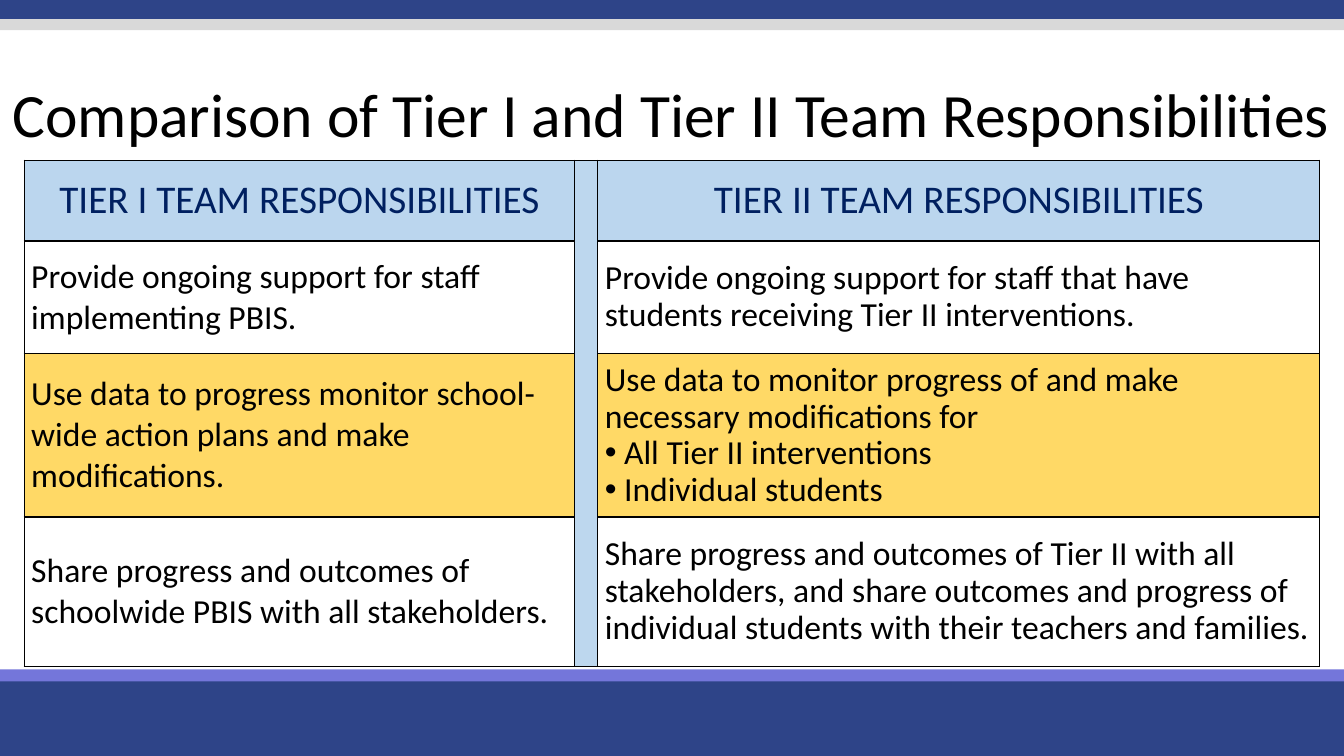
from lxml.etree import SubElement
from pptx import Presentation
from pptx.dml.color import RGBColor
from pptx.enum.shapes import MSO_SHAPE
from pptx.enum.text import MSO_ANCHOR, PP_ALIGN
from pptx.oxml.ns import qn
from pptx.util import Inches, Pt

COLORS = {
    "navy": "2E4488", "violet": "7476DA", "gray": "D9D9D9", "header": "BBD6EE",
    "divider": "BDD7EE", "gold": "FFD966", "white": "FFFFFF",
    "black": "000000", "heading": "002060",
}
FONT = "Calibri"
TITLE = "Comparison of Tier I and Tier II Team Responsibilities"
BANDS = [
    (6.7, 0.8, "navy"),
    (6.64, 0.12, "violet"),
    (0, 0.19, "navy"),
    (0.19, 0.11, "gray"),
]
COLUMN_WIDTHS = [5.46, 0.23, 7.16]
ROWS = [
    (0.8, "header", ["TIER I TEAM RESPONSIBILITIES"], ["TIER II TEAM RESPONSIBILITIES"]),
    (1.12, "white",
     ["Provide ongoing support for staff implementing PBIS."],
     ["Provide ongoing support for staff that have students receiving Tier II interventions."]),
    (1.62, "gold",
     ["Use data to progress monitor school-wide action plans and make modifications."],
     ["Use data to monitor progress of and make necessary modifications for",
      "All Tier II interventions", "Individual students"]),
    (1.48, "white",
     ["Share progress and outcomes of schoolwide PBIS with all stakeholders."],
     ["Share progress and outcomes of Tier II with all stakeholders, and share outcomes "
      "and progress of individual students with their teachers and families."]),
]


def set_values(target, values):
    for name, value in values.items():
        setattr(target, name, value)


def rgb(name):
    return RGBColor.from_string(COLORS[name])


def fill_solid(target, color):
    target.fill.solid()
    target.fill.fore_color.rgb = rgb(color)


def write(para, text, size, color, align, spacing):
    set_values(para, {"alignment": align, "line_spacing": spacing})
    span = para.add_run()
    span.text = text
    set_values(span.font, {"name": FONT, "size": Pt(size), "bold": False})
    span.font.color.rgb = rgb(color)


def add_bullet(para):
    properties = para._p.get_or_add_pPr()
    properties.set("marL", str(Inches(0.19)))
    properties.set("indent", str(-Inches(0.19)))
    SubElement(properties, qn("a:buFont"), typeface="Arial")
    SubElement(properties, qn("a:buChar"), char="•")


def add_borders(cell):
    properties = cell._tc.get_or_add_tcPr()
    for position, side in enumerate(["lnL", "lnR", "lnT", "lnB"]):
        line = SubElement(properties, qn(f"a:{side}"), w=str(Pt(1)))
        paint = SubElement(line, qn("a:solidFill"))
        SubElement(paint, qn("a:srgbClr"), val=COLORS["black"])
        properties.insert(position, line)


def add_bands(page, width):
    for top, height, color in BANDS:
        band = page.shapes.add_shape(MSO_SHAPE.RECTANGLE, 0, Inches(top), width, Inches(height))
        band.shadow.inherit = False
        fill_solid(band, color)
        band.line.fill.background()


def add_comparison(page):
    heights = [row[0] for row in ROWS]
    table = page.shapes.add_table(
        len(ROWS), len(COLUMN_WIDTHS), Inches(0.24), Inches(1.59),
        Inches(sum(COLUMN_WIDTHS)), Inches(sum(heights))).table
    set_values(table, {"first_row": False, "horz_banding": False})
    for column, width in zip(table.columns, COLUMN_WIDTHS):
        column.width = Inches(width)
    for row, height in zip(table.rows, heights):
        row.height = Inches(height)
    table.cell(0, 1).merge(table.cell(len(ROWS) - 1, 1))

    for row_index, (_, color, first_tier, second_tier) in enumerate(ROWS):
        is_header = row_index == 0
        size, ink = (28, "heading") if is_header else (24, "black")
        align = PP_ALIGN.CENTER if is_header else PP_ALIGN.LEFT
        for column_index, lines in enumerate([first_tier, [], second_tier]):
            cell = table.cell(row_index, column_index)
            fill_solid(cell, color if lines else "divider")
            add_borders(cell)
            set_values(cell, {
                "vertical_anchor": MSO_ANCHOR.MIDDLE, "margin_left": Inches(0.07),
                "margin_right": Inches(0.07), "margin_top": 0, "margin_bottom": 0,
            })
            spacing = 0.9 if is_header or column_index == 2 else 1.0
            for line_index, text in enumerate(lines):
                frame = cell.text_frame
                para = frame.add_paragraph() if line_index else frame.paragraphs[0]
                write(para, text, size, ink, align, spacing)
                if line_index:
                    add_bullet(para)


def add_title(page, width):
    frame = page.shapes.add_textbox(0, Inches(0.85), width, Inches(0.63)).text_frame
    set_values(frame, {
        "word_wrap": True, "vertical_anchor": MSO_ANCHOR.MIDDLE,
        "margin_left": Inches(0.05), "margin_right": Inches(0.05),
    })
    write(frame.paragraphs[0], TITLE, 44, "black", PP_ALIGN.CENTER, 0.9)


def main():
    deck = Presentation()
    set_values(deck, {"slide_width": Inches(13.33), "slide_height": Inches(7.5)})
    page = deck.slides.add_slide(deck.slide_layouts[6])
    add_bands(page, deck.slide_width)
    add_comparison(page)
    add_title(page, deck.slide_width)
    deck.save("out.pptx")


if __name__ == "__main__":
    main()
